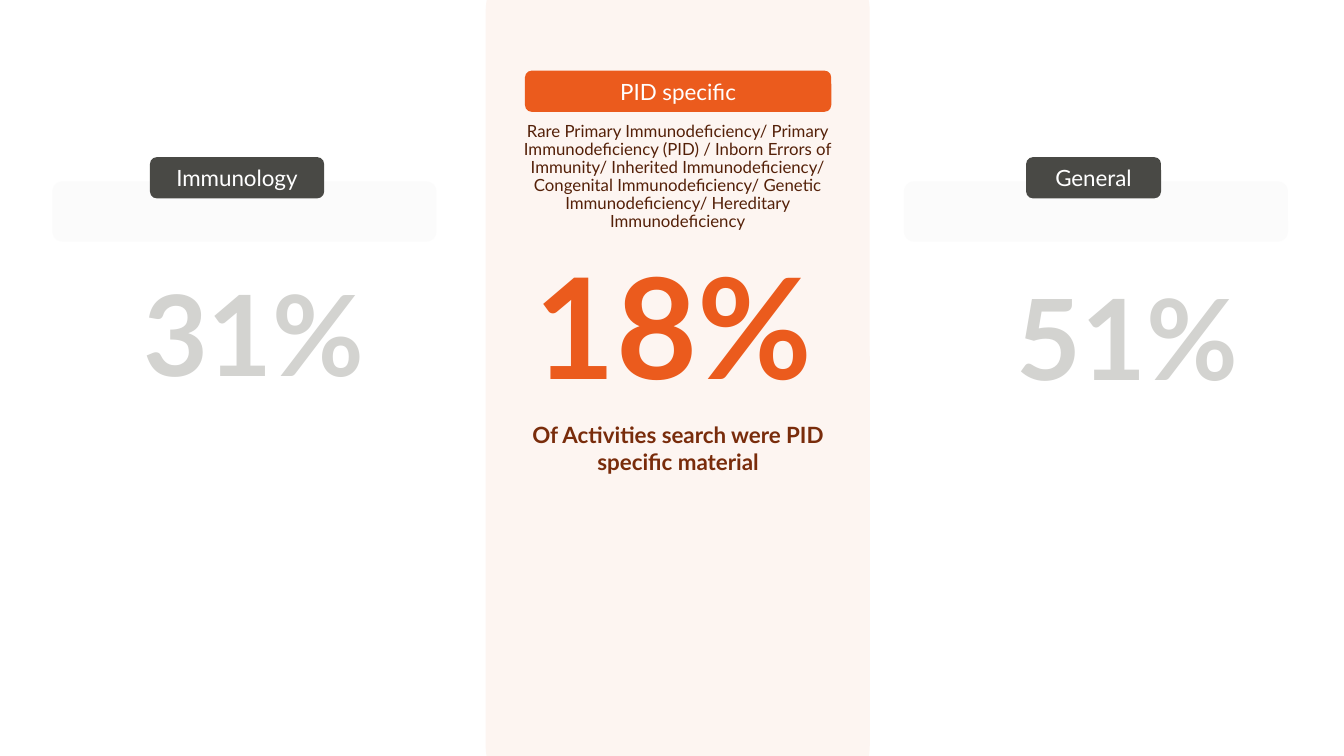
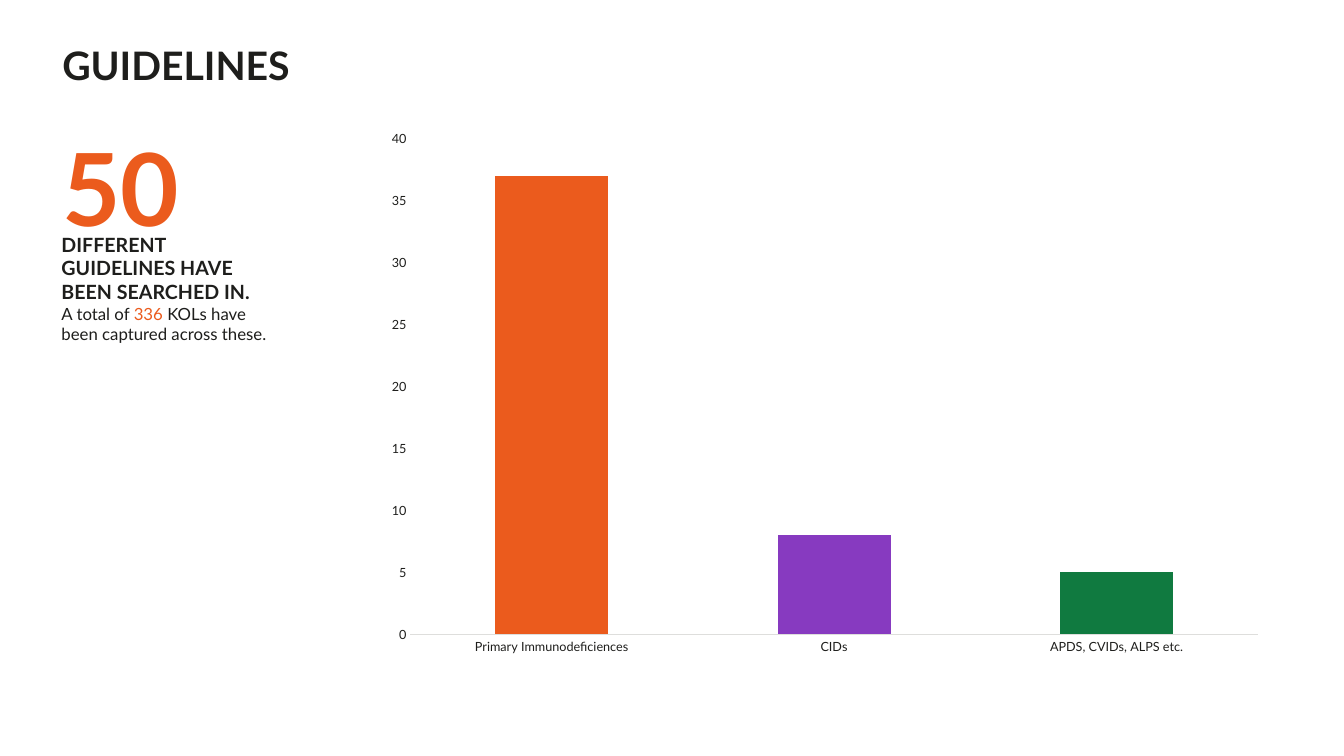
from lxml import etree
from pptx import Presentation
from pptx.chart.data import CategoryChartData
from pptx.dml.color import RGBColor
from pptx.enum.chart import XL_CHART_TYPE, XL_TICK_MARK
from pptx.enum.shapes import MSO_SHAPE
from pptx.enum.text import MSO_ANCHOR, PP_ALIGN
from pptx.oxml.ns import qn
from pptx.util import Cm, Pt

ROUNDED = MSO_SHAPE.FLOWCHART_ALTERNATE_PROCESS
LEFT, CENTER = PP_ALIGN.LEFT, PP_ALIGN.CENTER
NO_TICK = XL_TICK_MARK.NONE
FONT = "Lato"
COLORS = {
    "orange": "EB5B1D",
    "peach": "FBDED2",
    "rust": "792C0B",
    "brown": "542008",
    "ink": "1E1E1C",
    "charcoal": "494945",
    "silver": "D3D3D0",
    "mist": "F2F2F2",
    "axis": "DEDEDC",
    "purple": "873AC0",
    "green": "107A40",
    "white": "FFFFFF",
}


def rgb(name):
    return RGBColor.from_string(COLORS[name])


def write(shape, text, size, color, bold=False, align=LEFT):
    """Fill a shape with wrapped text, one paragraph per line, in one style."""
    text_frame = shape.text_frame
    text_frame.word_wrap = True
    text_frame.text = text
    for paragraph in text_frame.paragraphs:
        paragraph.alignment = align
        for run in paragraph.runs:
            run.font.name = FONT
            run.font.size = Pt(size)
            run.font.bold = bold
            run.font.color.rgb = rgb(color)
    return text_frame


presentation = Presentation()
presentation.slide_width = Cm(33.87)
presentation.slide_height = Cm(19.05)
blank = presentation.slide_layouts[6]

# Slide 1: share of searched activities
slide = presentation.slides.add_slide(blank)

# Panels: left, top, width, height, fill, opacity in percent, label
panels = [
    (12.24, -1.32, 9.68, 21.72, "peach", 30, ""),
    (1.32, 4.57, 9.68, 1.52, "mist", 25, ""),
    (22.78, 4.57, 9.68, 1.52, "mist", 25, ""),
    (3.78, 3.96, 4.39, 1.04, "charcoal", 100, "Immunology"),
    (13.23, 1.78, 7.72, 1.04, "orange", 100, "PID specific"),
    (25.86, 3.96, 3.4, 1.04, "charcoal", 100, "General"),
]
for left, top, width, height, color, opacity, label in panels:
    shape = slide.shapes.add_shape(ROUNDED, Cm(left), Cm(top), Cm(width), Cm(height))
    shape.shadow.inherit = False
    shape.line.fill.background()
    shape.fill.solid()
    shape.fill.fore_color.rgb = rgb(color)
    if opacity < 100:
        fill_color = shape.fill._xPr.find(".//" + qn("a:srgbClr"))
        etree.SubElement(fill_color, qn("a:alpha"), val=str(opacity * 1000))
    if label:
        write(shape, label, 16, "white", align=CENTER)

# Texts: left, top, width, height, text, size, colour, bold, alignment
texts = [
    (2.54, 6.55, 7.72, 3.68, "31%", 80, "silver", True, CENTER),
    (13.23, 5.92, 7.72, 4.52, "18%", 100, "orange", True, LEFT),
    (24.56, 6.63, 7.72, 3.68, "51%", 80, "silver", True, CENTER),
    (12.67, 10.49, 8.84, 1.63, "Of Activities search were PID specific material",
     16, "rust", True, CENTER),
]
for left, top, width, height, *style in texts:
    box = slide.shapes.add_textbox(Cm(left), Cm(top), Cm(width), Cm(height))
    write(box, *style)

search_terms = slide.shapes.add_textbox(Cm(12.37), Cm(2.97), Cm(9.42), Cm(3.05))
text_frame = write(
    search_terms,
    "Rare Primary Immunodeficiency/ Primary Immunodeficiency (PID) / Inborn Errors of "
    "Immunity/ Inherited Immunodeficiency/ Congenital Immunodeficiency/ Genetic "
    "Immunodeficiency/ Hereditary Immunodeficiency",
    12, "brown", align=CENTER)
text_frame.paragraphs[0].line_spacing = 0.9

# Slide 2: guidelines
slide = presentation.slides.add_slide(blank)

title = slide.shapes.add_textbox(Cm(1.32), Cm(0.71), Cm(31.19), Cm(2))
text_frame = write(title, "GUIDELINES", 28, "ink", bold=True)
text_frame.vertical_anchor = MSO_ANCHOR.MIDDLE
text_frame.paragraphs[0].line_spacing = 0.9

summary = slide.shapes.add_textbox(Cm(1.3), Cm(5.74), Cm(5.82), Cm(3.68))
text_frame = write(summary, "DIFFERENT GUIDELINES HAVE BEEN SEARCHED IN.", 14, "ink", bold=True)
paragraph = text_frame.add_paragraph()
for text, color in [("A total of ", "ink"), ("336 ", "orange"),
                    ("KOLs have been captured across these.", "ink")]:
    run = paragraph.add_run()
    run.text = text
    run.font.name = FONT
    run.font.size = Pt(12)
    run.font.color.rgb = rgb(color)

guideline_count = slide.shapes.add_textbox(Cm(1.32), Cm(3.05), Cm(8.08), Cm(3.33))
write(guideline_count, "50", 72, "orange", bold=True)

chart_data = CategoryChartData()
chart_data.categories = ["Primary Immunodeficiences", "CIDs", "APDS, CVIDs, ALPS etc."]
chart_data.add_series("Series 1", (37, 8, 5))
chart = slide.shapes.add_chart(
    XL_CHART_TYPE.COLUMN_STACKED, Cm(9.42), Cm(3.02), Cm(22.73), Cm(13.74), chart_data).chart
chart.has_legend = False
chart.has_title = False
chart.font.name = FONT
chart.font.size = Pt(10)
chart.font.color.rgb = rgb("ink")

plot = chart.plots[0]
plot.gap_width = 150
plot.overlap = 100
plot.vary_by_categories = False
for index, color in enumerate(["orange", "purple", "green"]):
    fill = plot.series[0].points[index].format.fill
    fill.solid()
    fill.fore_color.rgb = rgb(color)

for axis in (chart.category_axis, chart.value_axis):
    axis.has_major_gridlines = False
    axis.major_tick_mark = axis.minor_tick_mark = NO_TICK
    axis.tick_labels.font.name = FONT
    axis.tick_labels.font.size = Pt(9)
    axis.tick_labels.font.color.rgb = rgb("ink")
chart.category_axis.format.line.color.rgb = rgb("axis")
chart.category_axis.format.line.width = Pt(0.75)
chart.value_axis.format.line.fill.background()
chart.value_axis.minimum_scale = 0
chart.value_axis.maximum_scale = 40
chart.value_axis.major_unit = 5

presentation.save("out.pptx")
